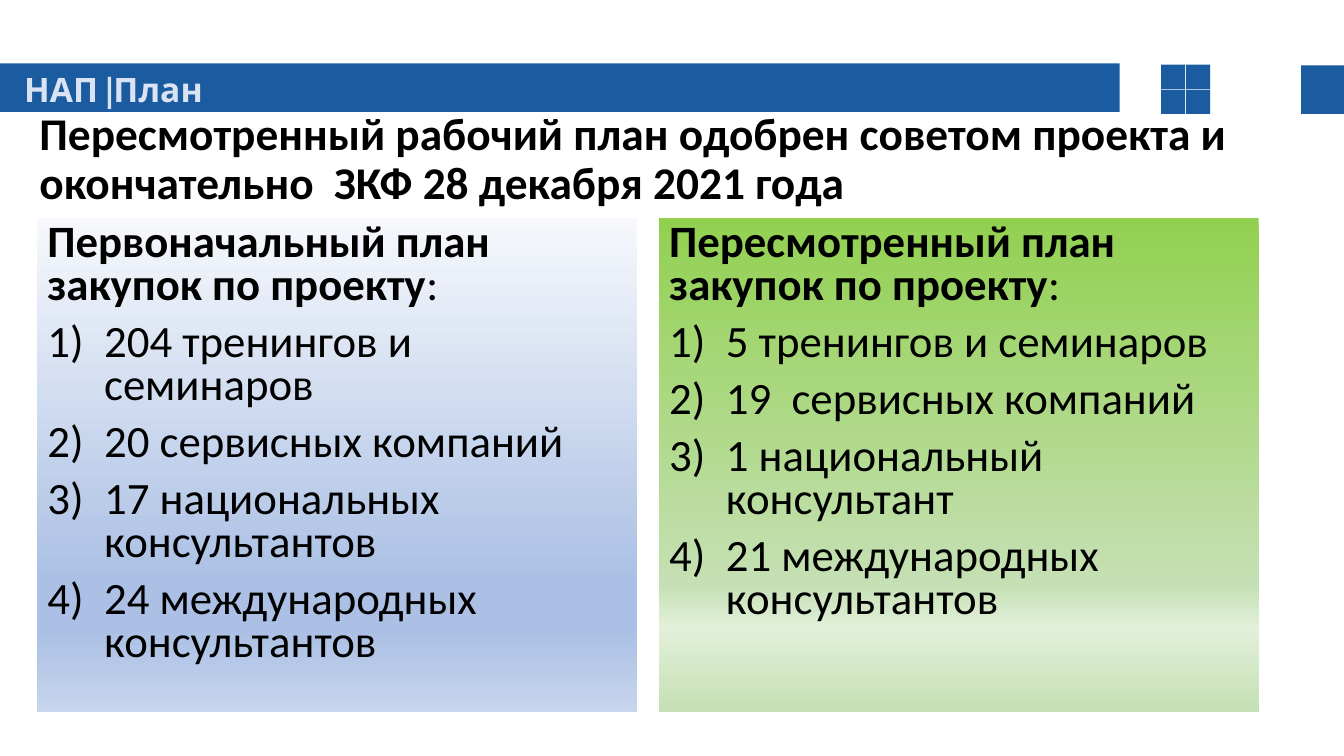
from lxml.etree import SubElement
from pptx import Presentation
from pptx.dml.color import RGBColor
from pptx.enum.shapes import MSO_SHAPE as SHAPE
from pptx.enum.text import MSO_ANCHOR as ANCHOR, MSO_AUTO_SIZE as FIT, PP_ALIGN as ALIGN
from pptx.oxml.ns import qn
from pptx.util import Cm, Pt

BAND_TEXT = "НАП |План"
TITLE = ("Пересмотренный рабочий план одобрен советом проекта и "
         "окончательно  ЗКФ 28 декабря 2021 года")
PLANS = [
    ("Первоначальный план закупок по проекту",
     ["204 тренингов и семинаров", "20 сервисных компаний",
      "17 национальных консультантов", "24 международных консультантов"],
     ["F6F8FC", "ABC0E4", "ABC0E4", "C7D5ED"]),
    ("Пересмотренный план закупок по проекту",
     ["5 тренингов и семинаров", "19  сервисных компаний",
      "1 национальный консультант", "21 международных консультантов"],
     ["92D050", "C5E0B4", "E2F0D9", "C5E0B4"]),
]
STOPS = [0, 74, 83, 100]
COLORS = {"band": "1B5BA0", "band_text": "DAE3F3", "text": "000000"}
BAND_FONT = {"name": "Cabin", "size": Pt(24), "bold": True}
TITLE_FONT = {"name": "Calibri", "size": Pt(32.4), "bold": True}
HEAD_FONT = {"name": "Calibri", "size": Pt(32), "bold": True}
ITEM_FONT = {**HEAD_FONT, "bold": False}
FRAME = {"word_wrap": True, "auto_size": FIT.NONE}
MIDDLE = {**FRAME, "vertical_anchor": ANCHOR.MIDDLE}

BAND = (-0.41, 1.6, 28.63, 1.22)
BAND_LABEL = (0.36, 1.5, 26.72, 1.47)
EDGE = (32.79, 1.65, 2.34, 1.22)
PANE_LEFT, PANE_TOP, PANE, PANE_STEP = 29.26, 1.63, 0.61, 0.63
TITLE_BOX = (0.74, 2.92, 32.74, 2.26)
PLAN_LEFT, PLAN_TOP, PLAN_W, PLAN_H, PLAN_STEP = 0.94, 5.49, 15.11, 12.45, 15.67
INDENT = Cm(1.43)


def apply(obj, values):
    for key, value in values.items():
        setattr(obj, key, value)


def place(sp, box):
    apply(sp, dict(zip(("left", "top", "width", "height"), map(Cm, box))))


def add_run(p, text, font, color="text"):
    r = p.add_run()
    r.text = text
    apply(r.font, font)
    r.font.color.rgb = RGBColor.from_string(COLORS[color])


def add_block(slide, box):
    sp = slide.shapes.add_shape(SHAPE.RECTANGLE, *map(Cm, box))
    sp.shadow.inherit = False
    sp.fill.solid()
    sp.fill.fore_color.rgb = RGBColor.from_string(COLORS["band"])
    sp.line.fill.background()


def fill_gradient(sp, colors):
    sp.fill.gradient()
    sp.fill.gradient_angle = 270
    stops = sp.element.spPr.find(qn("a:gradFill")).find(qn("a:gsLst"))
    for gs in list(stops):
        stops.remove(gs)
    for pos, color in zip(STOPS, colors):
        gs = SubElement(stops, qn("a:gs"), pos=str(pos * 1000))
        SubElement(gs, qn("a:srgbClr"), val=color)


def format_item(p, numbered):
    pPr = p._p.get_or_add_pPr()
    pPr.set("marL", str(INDENT if numbered else 0))
    pPr.set("indent", str(-INDENT if numbered else 0))
    if numbered:
        SubElement(pPr, qn("a:buFont"), typeface="+mj-lt")
        SubElement(pPr, qn("a:buAutoNum"), type="arabicParenR")
    else:
        SubElement(pPr, qn("a:buNone"))
    apply(p, {"line_spacing": 0.8, "space_before": Pt(10 if numbered else 0)})


def fill_plan(sp, heading, items):
    tf = sp.text_frame
    apply(tf, FRAME)
    p = tf.paragraphs[0]
    format_item(p, False)
    add_run(p, heading, HEAD_FONT)
    add_run(p, ":", ITEM_FONT)
    for item in items:
        p = tf.add_paragraph()
        format_item(p, True)
        add_run(p, item, ITEM_FONT)


def main():
    prs = Presentation()
    apply(prs, {"slide_width": Cm(33.87), "slide_height": Cm(19.05)})
    slide = prs.slides.add_slide(prs.slide_layouts[3])

    panes = [(PANE_LEFT + col * PANE_STEP, PANE_TOP + row * PANE_STEP, PANE, PANE)
             for row in range(2) for col in range(2)]
    for box in [BAND, EDGE, *panes]:
        add_block(slide, box)

    label = slide.shapes.add_textbox(*map(Cm, BAND_LABEL))
    apply(label.text_frame, MIDDLE)
    add_run(label.text_frame.paragraphs[0], BAND_TEXT, BAND_FONT, "band_text")

    title = slide.shapes.title
    place(title, TITLE_BOX)
    apply(title.text_frame, MIDDLE)
    p = title.text_frame.paragraphs[0]
    apply(p, {"alignment": ALIGN.LEFT, "line_spacing": 0.9})
    add_run(p, TITLE, TITLE_FONT)

    for i, (heading, items, colors) in enumerate(PLANS):
        body = slide.placeholders[i + 1]
        place(body, (PLAN_LEFT + i * PLAN_STEP, PLAN_TOP, PLAN_W, PLAN_H))
        fill_gradient(body, colors)
        fill_plan(body, heading, items)

    prs.save("out.pptx")


if __name__ == "__main__":
    main()
